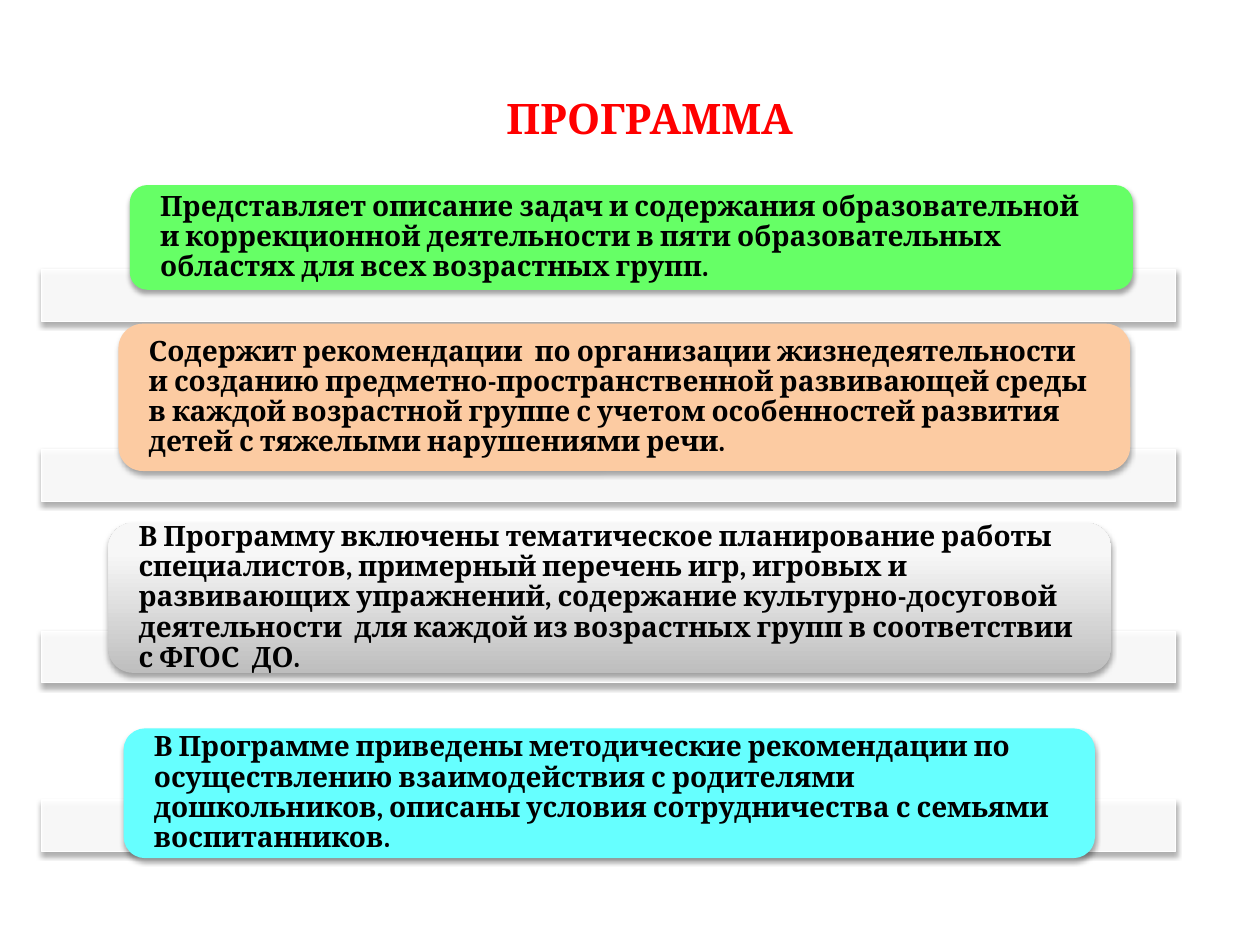
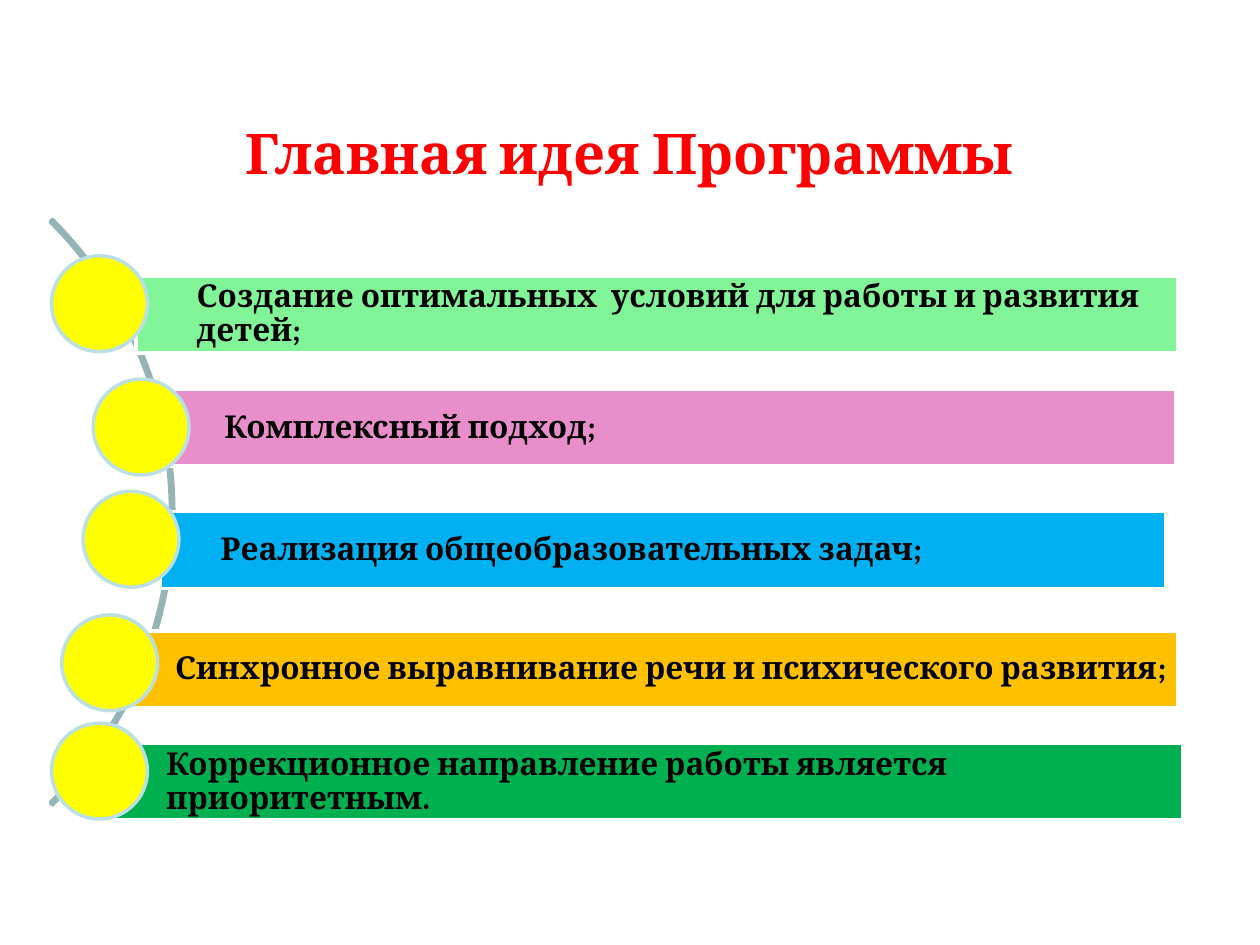
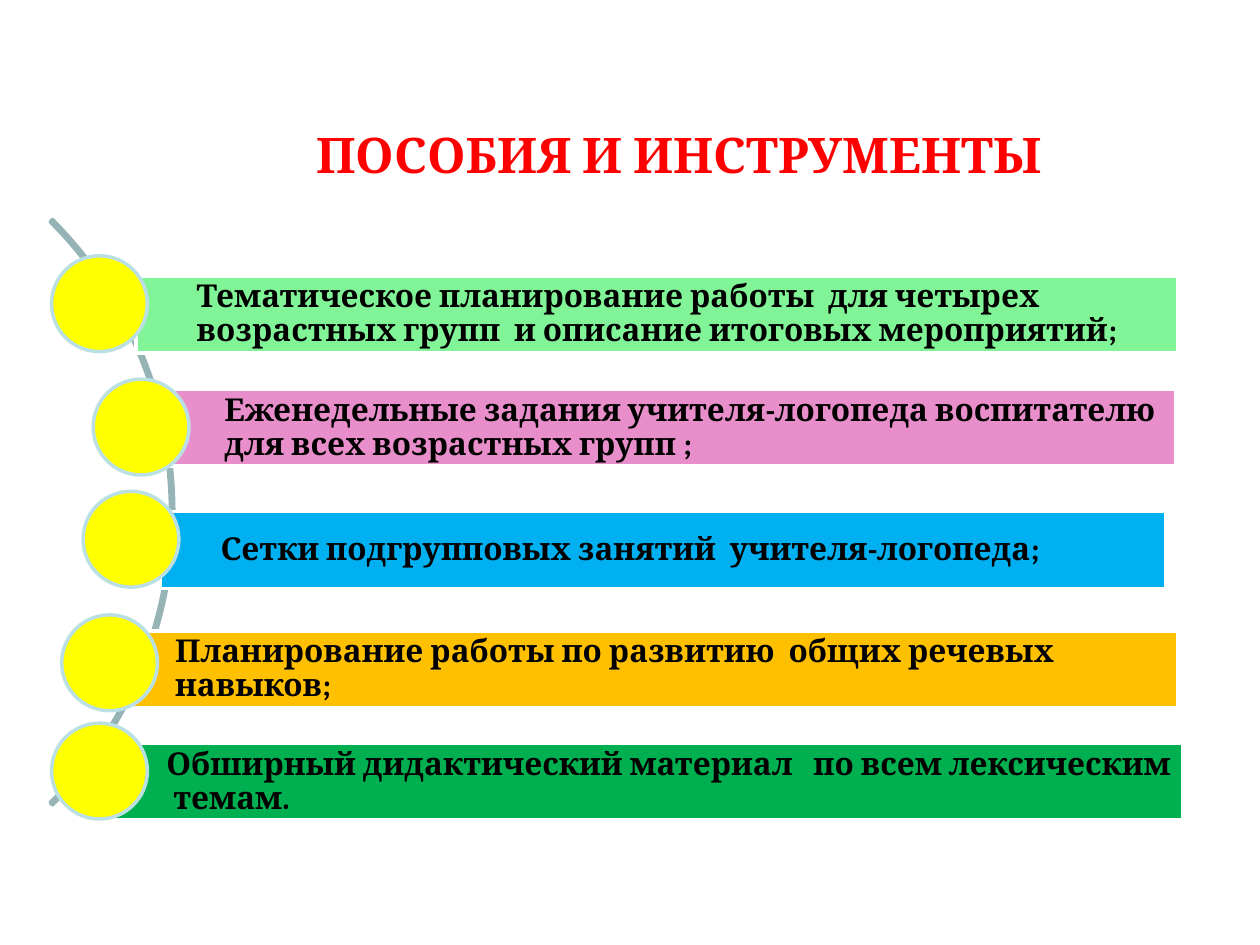
from copy import deepcopy
from dataclasses import dataclass
from typing import Optional

from lxml.etree import SubElement
from pptx import Presentation
from pptx.dml.color import RGBColor
from pptx.enum.shapes import MSO_SHAPE
from pptx.enum.text import MSO_ANCHOR, MSO_AUTO_SIZE, PP_ALIGN
from pptx.oxml.ns import qn
from pptx.util import Pt

# Shared colours and font
WHITE = RGBColor(0xFF, 0xFF, 0xFF)
BLACK = RGBColor(0x00, 0x00, 0x00)
RED = RGBColor(0xFF, 0x00, 0x00)
YELLOW = RGBColor(0xFF, 0xFF, 0x00)
LIME = RGBColor(0x66, 0xFF, 0x66)
PEACH = RGBColor(0xFC, 0xCB, 0xA2)
CYAN = RGBColor(0x66, 0xFF, 0xFF)
MINT = RGBColor(0x82, 0xF4, 0x98)
PINK = RGBColor(0xE8, 0x8E, 0xCA)
BLUE = RGBColor(0x00, 0xB0, 0xF0)
AMBER = RGBColor(0xFF, 0xC0, 0x00)
GREEN = RGBColor(0x00, 0xB0, 0x50)
PALE_BLUE = RGBColor(0xBB, 0xE0, 0xE3)
ARC_GRAY = RGBColor(0x96, 0xB3, 0xB6)
GRADIENT_STOPS = (
    (0, RGBColor(0xBE, 0xBE, 0xBE)),
    (0.8, RGBColor(0xF7, 0xF7, 0xF7)),
    (1, RGBColor(0xF8, 0xF8, 0xF8)),
)
FONT_NAME = "Cambria"

# Shared sizes, in points
TITLE_ONLY_LAYOUT = 5
STRIP_LEFT, STRIP_WIDTH, STRIP_HEIGHT = 23.8, 648, 29.5
CARD_INSET = 17.3
CORNER_INSET = 0.0488  # text inset of a rounded corner, as a share of height
BAR_HEIGHT, BAR_INSET, BAR_EDGE = 43.9, 34.6, 3.6
CIRCLE_SIZE = 54.7
ARC_LEFT, ARC_TOP, ARC_SIZE = -373.7, 56.2, 473


@dataclass(frozen=True)
class Box:
    left: float
    top: float
    width: float
    height: float


@dataclass(frozen=True)
class Card:
    box: Box
    strip_top: float
    color: Optional[RGBColor]  # None means the grey gradient
    text: str


@dataclass(frozen=True)
class Bar:
    left: float
    top: float
    width: float
    color: RGBColor
    circle_left: float
    circle_top: float


@dataclass(frozen=True)
class ListSlide:
    title: str
    title_box: Box
    title_size: float
    items: tuple[str, ...]


CARDS = (
    Card(Box(74.2, 105.8, 573.1, 59.8), 154.1, LIME,
         "Представляет описание задач и содержания образовательной и коррекционной "
         "деятельности в пяти образовательных областях для всех возрастных групп."),
    Card(Box(67.7, 185, 578.2, 84.2), 257, PEACH,
         "Содержит рекомендации  по организации жизнедеятельности и созданию "
         "предметно-пространственной развивающей среды в каждой возрастной группе "
         "с учетом особенностей развития детей с тяжелыми нарушениями речи."),
    Card(Box(61.9, 298.8, 573.1, 85.7), 360.7, None,
         "В Программу включены тематическое планирование работы специалистов, "
         "примерный перечень игр, игровых и развивающих упражнений, содержание "
         "культурно-досуговой деятельности  для каждой из возрастных групп "
         "в соответствии с ФГОС  ДО."),
    Card(Box(70.6, 416.2, 555.1, 74.2), 457.2, CYAN,
         "В Программе приведены методические рекомендации по осуществлению "
         "взаимодействия с родителями дошкольников, описаны условия сотрудничества "
         "с семьями воспитанников."),
)

BARS = (
    Bar(77.8, 157.7, 595.4, MINT, 29.5, 146.2),
    Bar(93.6, 222.5, 578.2, PINK, 53.3, 216.7),
    Bar(91.4, 292.3, 574.6, BLUE, 47.5, 280.8),
    Bar(65.5, 360.7, 607.7, AMBER, 35.3, 351.4),
    Bar(60.5, 424.8, 615.6, GREEN, 29.5, 413.3),
)

LIST_SLIDES = (
    ListSlide("Главная идея Программы", Box(36, 62, 648, 49.7), 32, (
        "Создание оптимальных  условий для работы и развития детей;",
        "Комплексный подход;",
        "Реализация общеобразовательных задач;",
        "Синхронное выравнивание речи и психического развития;",
        "Коррекционное направление работы является приоритетным.",
    )),
    ListSlide("ПОСОБИЯ И ИНСТРУМЕНТЫ", Box(64, 63, 648, 49.7), 28, (
        "Тематическое планирование работы  для четырех возрастных групп  "
        "и описание итоговых мероприятий;",
        "Еженедельные задания учителя-логопеда воспитателю для всех возрастных групп ;",
        "Сетки подгрупповых занятий  учителя-логопеда;",
        "Планирование работы по развитию  общих речевых навыков;",
        "Обширный дидактический материал   по всем лексическим  темам.",
    )),
)


def set_attributes(target, values: dict) -> None:
    for name, value in values.items():
        setattr(target, name, value)


def place(shape, box: Box) -> None:
    set_attributes(shape, {
        "left": Pt(box.left), "top": Pt(box.top),
        "width": Pt(box.width), "height": Pt(box.height),
    })


def write_text(shape, text: str, size: float, color: RGBColor, alignment,
               line_spacing: float, side_insets: tuple[float, float],
               edge_inset: float) -> None:
    frame = shape.text_frame
    frame.text = text
    set_attributes(frame, {
        "word_wrap": True, "auto_size": MSO_AUTO_SIZE.NONE,
        "vertical_anchor": MSO_ANCHOR.MIDDLE,
        "margin_left": Pt(side_insets[0]), "margin_right": Pt(side_insets[1]),
        "margin_top": Pt(edge_inset), "margin_bottom": Pt(edge_inset),
    })
    paragraph = frame.paragraphs[0]
    set_attributes(paragraph, {
        "alignment": alignment, "line_spacing": line_spacing, "space_before": Pt(0),
    })
    font = paragraph.runs[0].font
    set_attributes(font, {"name": FONT_NAME, "size": Pt(size), "bold": True})
    font.color.rgb = color


def add_titled_slide(presentation, title: str, box: Box, size: float):
    slide = presentation.slides.add_slide(presentation.slide_layouts[TITLE_ONLY_LAYOUT])
    place(slide.shapes.title, box)
    write_text(slide.shapes.title, title, size, RED, PP_ALIGN.CENTER, 1, (7.2, 7.2), 3.6)
    return slide


def add_figure(slide, kind, box: Box, fill: Optional[RGBColor],
               line: Optional[RGBColor] = None, line_width: float = 2):
    shape = slide.shapes.add_shape(
        kind, Pt(box.left), Pt(box.top), Pt(box.width), Pt(box.height))
    shape.shadow.inherit = False
    if fill is None:
        shape.fill.background()
    else:
        shape.fill.solid()
        shape.fill.fore_color.rgb = fill
    if line is None:
        shape.line.fill.background()
    else:
        shape.line.color.rgb = line
        shape.line.width = Pt(line_width)
    return shape


def add_soft_shadow(shape) -> None:
    effects = shape._element.spPr.find(qn("a:effectLst"))
    shadow = SubElement(effects, qn("a:outerShdw"), {
        "blurRad": str(Pt(3.1)), "dist": str(Pt(1.8)),
        "dir": "5400000", "rotWithShape": "0",
    })
    color = SubElement(shadow, qn("a:srgbClr"), val=str(BLACK))
    SubElement(color, qn("a:alpha"), val="35000")


def fill_with_gradient(shape) -> None:
    shape.fill.gradient()
    shape.fill.gradient_angle = 90
    stop_list = shape._element.spPr.find(".//" + qn("a:gsLst"))
    stop_list.append(deepcopy(stop_list[-1]))
    for stop, (position, color) in zip(shape.fill.gradient_stops, GRADIENT_STOPS):
        stop.position = position
        stop.color.rgb = color


def add_card(slide, card: Card) -> None:
    # Translucent strip behind the card
    strip_box = Box(STRIP_LEFT, card.strip_top, STRIP_WIDTH, STRIP_HEIGHT)
    strip = add_figure(slide, MSO_SHAPE.RECTANGLE, strip_box, WHITE, WHITE, 0.75)
    strip_color = strip._element.spPr.find(qn("a:solidFill")).find(qn("a:srgbClr"))
    SubElement(strip_color, qn("a:alpha"), val="90000")
    add_soft_shadow(strip)
    # Rounded card with its text
    shape = add_figure(slide, MSO_SHAPE.ROUNDED_RECTANGLE, card.box, card.color)
    if card.color is None:
        fill_with_gradient(shape)
    add_soft_shadow(shape)
    inset = CARD_INSET - card.box.height * CORNER_INSET
    write_text(shape, card.text, 16, BLACK, PP_ALIGN.LEFT, 0.9, (inset, inset), 0)


def add_arc(slide) -> None:
    arc = add_figure(slide, MSO_SHAPE.BLOCK_ARC,
                     Box(ARC_LEFT, ARC_TOP, ARC_SIZE, ARC_SIZE), None, ARC_GRAY)
    for index, value in enumerate((189, 27, 0.004)):
        arc.adjustments[index] = value


def add_bar(slide, bar: Bar, text: str) -> None:
    shape = add_figure(slide, MSO_SHAPE.RECTANGLE,
                       Box(bar.left, bar.top, bar.width, BAR_HEIGHT), bar.color, WHITE)
    write_text(shape, text, 18, BLACK, PP_ALIGN.LEFT, 0.9, (BAR_INSET, BAR_EDGE), BAR_EDGE)
    circle_box = Box(bar.circle_left, bar.circle_top, CIRCLE_SIZE, CIRCLE_SIZE)
    add_figure(slide, MSO_SHAPE.OVAL, circle_box, YELLOW, PALE_BLUE)


def main() -> None:
    presentation = Presentation()
    presentation.slide_width = Pt(720)
    presentation.slide_height = Pt(540)

    # Programme cards
    slide = add_titled_slide(presentation, "ПРОГРАММА", Box(70.6, 49, 601.2, 36.7), 24)
    for card in CARDS:
        add_card(slide, card)

    # Lists along an arc
    for content in LIST_SLIDES:
        slide = add_titled_slide(
            presentation, content.title, content.title_box, content.title_size)
        add_arc(slide)
        for bar, text in zip(BARS, content.items):
            add_bar(slide, bar, text)

    presentation.save("out.pptx")


if __name__ == "__main__":
    main()
